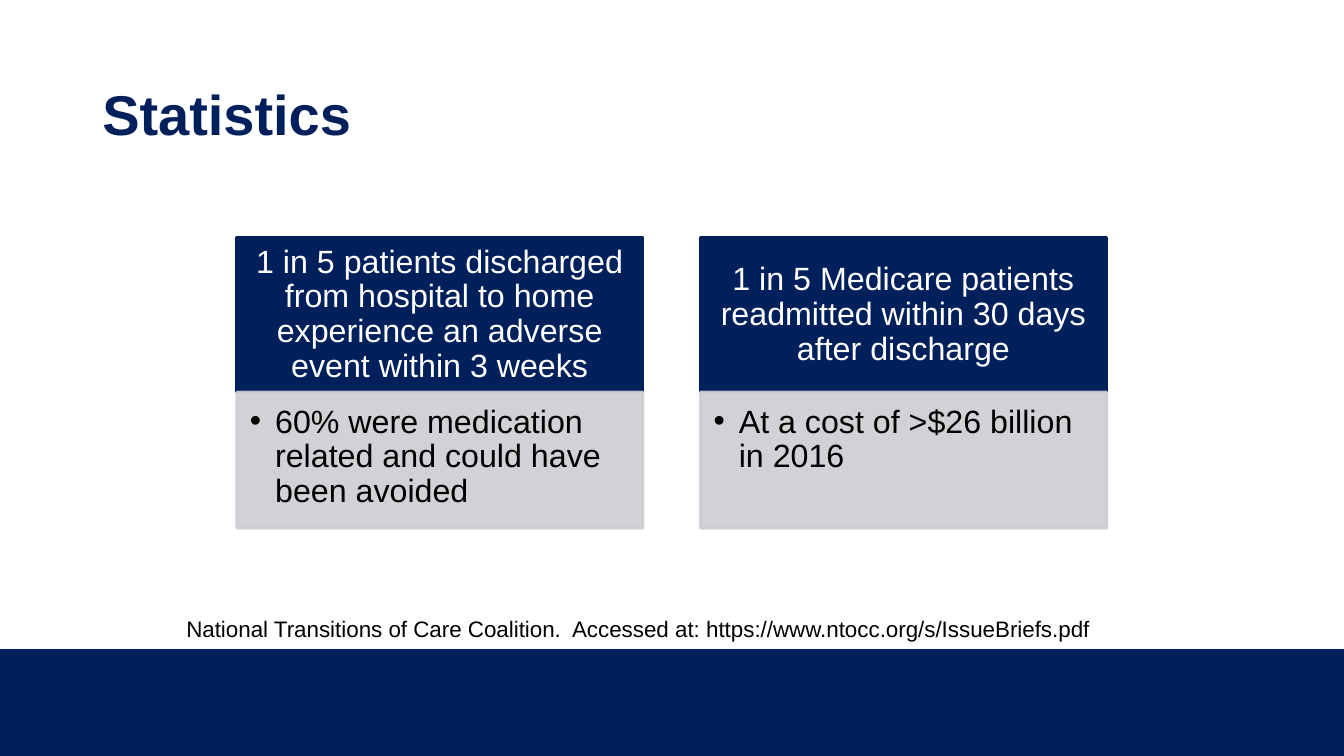
from dataclasses import dataclass
from typing import Optional

from lxml.etree import SubElement
from pptx import Presentation
from pptx.dml.color import RGBColor
from pptx.enum.shapes import MSO_SHAPE
from pptx.enum.text import MSO_ANCHOR, PP_ALIGN
from pptx.oxml.ns import qn
from pptx.shapes.autoshape import Shape
from pptx.slide import Slide
from pptx.text.text import _Paragraph
from pptx.util import Pt


@dataclass(frozen=True)
class Theme:
    navy: RGBColor = RGBColor(0x00, 0x20, 0x5B)
    grey: RGBColor = RGBColor(0xCC, 0xCD, 0xD2)
    pale: RGBColor = RGBColor(0xF8, 0xF8, 0xF8)
    white: RGBColor = RGBColor(0xFF, 0xFF, 0xFF)
    black: RGBColor = RGBColor(0x00, 0x00, 0x00)
    font: str = "Arial"
    title_size: float = 40
    card_size: float = 23
    citation_size: float = 16


@dataclass(frozen=True)
class Box:
    left: float
    top: float
    width: float
    height: float


@dataclass(frozen=True)
class Insets:
    left: float = 7.2
    top: float = 3.6
    right: float = 7.2
    bottom: float = 3.6


@dataclass(frozen=True)
class Statistic:
    finding: str
    detail: str


THEME = Theme()
SLIDE_WIDTH, SLIDE_HEIGHT = 960, 540
CARD_LEFT, CARD_TOP, CARD_WIDTH, CARD_PITCH = 169.2, 169.92, 290.16, 331.2
FINDING_HEIGHT, DETAIL_HEIGHT = 110.16, 97.2
FINDING_INSETS = Insets(12.96, 7.2, 12.96, 7.2)
DETAIL_INSETS = Insets(9.36, 9.36, 12.96, 14.4)
BULLET_INDENT = 18
STATISTICS = [
    Statistic(
        "1 in 5 patients discharged from hospital to home experience an adverse event within 3 weeks",
        "60% were medication related and could have been avoided",
    ),
    Statistic(
        "1 in 5 Medicare patients readmitted within 30 days after discharge",
        "At a cost of >$26 billion in 2016",
    ),
]


def add_panel(slide: Slide, box: Box, color: RGBColor, line_width: float = 0,
              opacity: Optional[int] = None) -> Shape:
    panel = slide.shapes.add_shape(
        MSO_SHAPE.RECTANGLE, Pt(box.left), Pt(box.top), Pt(box.width), Pt(box.height))
    panel.shadow.inherit = False
    panel.fill.solid()
    panel.fill.fore_color.rgb = color
    if line_width:
        panel.line.color.rgb = color
        panel.line.width = Pt(line_width)
    else:
        panel.line.fill.background()
    if opacity is not None:
        for color_element in panel._element.spPr.iter(qn("a:srgbClr")):
            SubElement(color_element, qn("a:alpha"), val=str(opacity * 1000))
    return panel


def write(shape: Shape, text: str, size: float, color: RGBColor, insets: Insets = Insets(),
          anchor: MSO_ANCHOR = MSO_ANCHOR.TOP, align: PP_ALIGN = PP_ALIGN.LEFT,
          spacing: float = 1, bold: bool = False, bulleted: bool = False) -> None:
    frame = shape.text_frame
    frame.word_wrap = True
    frame.vertical_anchor = anchor
    frame.margin_left, frame.margin_top = Pt(insets.left), Pt(insets.top)
    frame.margin_right, frame.margin_bottom = Pt(insets.right), Pt(insets.bottom)
    paragraph = frame.paragraphs[0]
    paragraph.text = text
    paragraph.alignment = align
    paragraph.line_spacing = spacing
    if bulleted:
        add_bullet(paragraph)
    paragraph.font.name = THEME.font
    paragraph.font.size = Pt(size)
    paragraph.font.bold = bold
    paragraph.font.color.rgb = color


def add_bullet(paragraph: _Paragraph) -> None:
    properties = paragraph._p.get_or_add_pPr()
    properties.set("marL", str(Pt(BULLET_INDENT)))
    properties.set("indent", str(-Pt(BULLET_INDENT)))
    SubElement(properties, qn("a:buFont"), typeface=THEME.font)
    SubElement(properties, qn("a:buChar"), char="•")


def add_label(slide: Slide, box: Box) -> Shape:
    return slide.shapes.add_textbox(Pt(box.left), Pt(box.top), Pt(box.width), Pt(box.height))


def add_card(slide: Slide, statistic: Statistic, left: float) -> None:
    finding = add_panel(slide, Box(left, CARD_TOP, CARD_WIDTH, FINDING_HEIGHT), THEME.navy, 2)
    write(finding, statistic.finding, THEME.card_size, THEME.white, FINDING_INSETS,
          MSO_ANCHOR.MIDDLE, PP_ALIGN.CENTER, 0.9)
    detail_box = Box(left, CARD_TOP + FINDING_HEIGHT, CARD_WIDTH, DETAIL_HEIGHT)
    detail = add_panel(slide, detail_box, THEME.grey, 2, 90)
    write(detail, statistic.detail, THEME.card_size, THEME.black, DETAIL_INSETS,
          spacing=0.9, bulleted=True)


def main() -> None:
    presentation = Presentation()
    presentation.slide_width, presentation.slide_height = Pt(SLIDE_WIDTH), Pt(SLIDE_HEIGHT)
    slide = presentation.slides.add_slide(presentation.slide_layouts[6])

    for top, color in ((463, THEME.pale), (463.7, THEME.navy)):
        add_panel(slide, Box(0, top, SLIDE_WIDTH, SLIDE_HEIGHT - top), color)

    title = add_label(slide, Box(66, 28.8, 828, 104.4))
    write(title, "Statistics", THEME.title_size, THEME.navy, anchor=MSO_ANCHOR.MIDDLE, bold=True)

    for column, statistic in enumerate(STATISTICS):
        add_card(slide, statistic, CARD_LEFT + column * CARD_PITCH)

    citation = add_label(slide, Box(126, 435.6, 707.76, 26.64))
    write(citation,
          "National Transitions of Care Coalition.  Accessed at: https://www.ntocc.org/s/IssueBriefs.pdf",
          THEME.citation_size, THEME.black)

    presentation.save("out.pptx")


if __name__ == "__main__":
    main()
